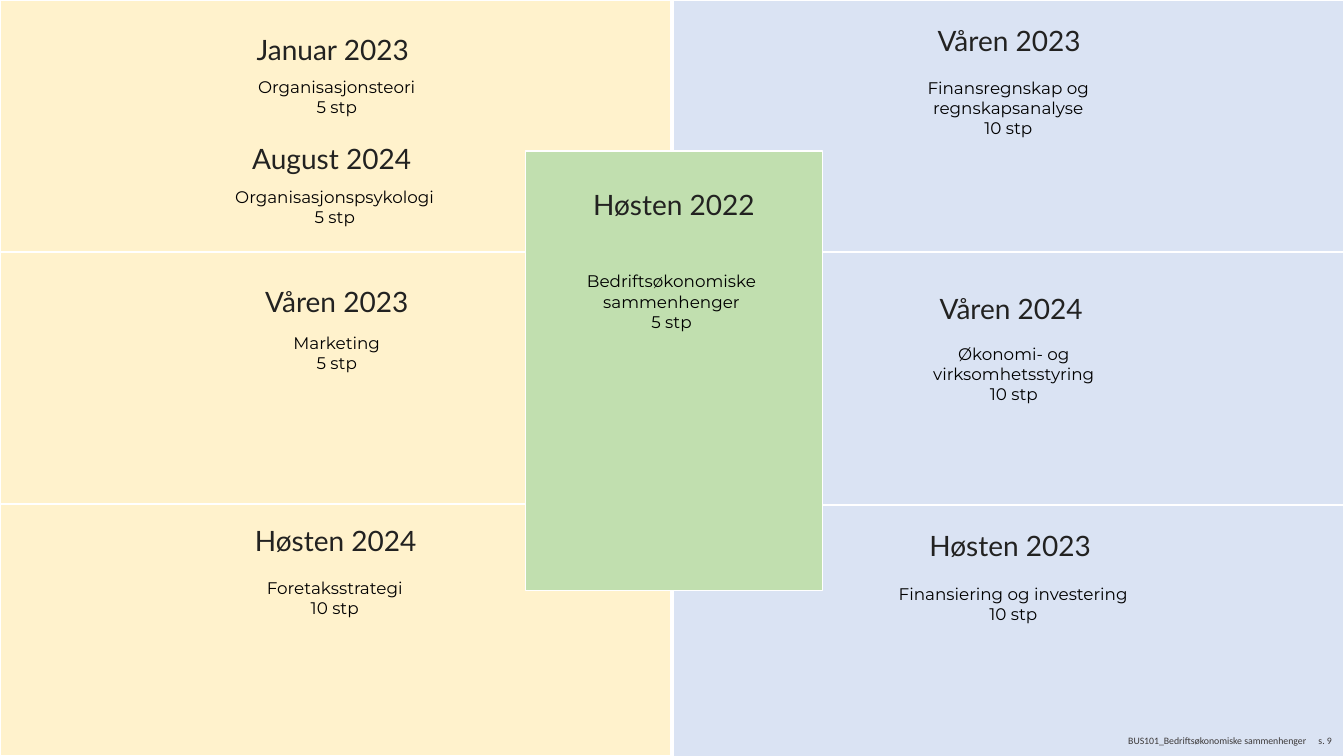
from pptx import Presentation
from pptx.dml.color import RGBColor
from pptx.enum import shapes, text
from pptx.util import Inches, Pt

CREAM = RGBColor(0xFF, 0xF2, 0xCC)
PALE_BLUE = RGBColor(0xDA, 0xE3, 0xF3)
GREEN = RGBColor(0xC1, 0xDF, 0xAF)
WHITE = RGBColor(0xFF, 0xFF, 0xFF)
BLACK = RGBColor(0, 0, 0)
CHARCOAL = RGBColor(0x22, 0x22, 0x21)
GREY = RGBColor(0x3B, 0x38, 0x38)

prs = Presentation()
prs.slide_width = Inches(13.33)
prs.slide_height = Inches(7.5)
slide = prs.slides.add_slide(prs.slide_layouts[6])


def add_panel(left, top, width, height, color):
    panel = slide.shapes.add_shape(
        shapes.MSO_SHAPE.RECTANGLE,
        Inches(left), Inches(top), Inches(width), Inches(height))
    panel.shadow.inherit = False
    panel.fill.solid()
    panel.fill.fore_color.rgb = color
    panel.line.color.rgb = WHITE
    panel.line.width = Pt(1)


def add_text(lines, left, top, width, height, *, size, font, color,
             align=text.PP_ALIGN.CENTER, anchor=text.MSO_ANCHOR.TOP,
             inset_x=0.1, inset_y=0.05):
    box = slide.shapes.add_textbox(
        Inches(left), Inches(top), Inches(width), Inches(height))
    frame = box.text_frame
    frame.word_wrap = True
    frame.vertical_anchor = anchor
    frame.margin_left = frame.margin_right = Inches(inset_x)
    frame.margin_top = frame.margin_bottom = Inches(inset_y)
    frame.text = "\n".join(lines)
    for paragraph in frame.paragraphs:
        paragraph.alignment = align
        paragraph.font.size = Pt(size)
        paragraph.font.name = font
        paragraph.font.color.rgb = color


# Three rows in two columns, with the introductory course on top
for row in range(3):
    add_panel(0, row * 2.5, 6.65, 2.5, CREAM)
    add_panel(6.68, row * 2.505, 6.65, 2.5, PALE_BLUE)
add_panel(5.21, 1.5, 2.95, 4.36, GREEN)

# Semester and its place, then course, credits and their place
courses = [
    ("Høsten 2022", (5.21, 1.81, 2.95),
     "Bedriftsøkonomiske sammenhenger", "5 stp", (5.05, 2.61, 3.22, 0.76)),
    ("Våren 2023", (6.68, 0.18, 6.66),
     "Finansregnskap og regnskapsanalyse", "10 stp", (8.39, 0.69, 3.22, 0.76)),
    ("Våren 2024", (7.45, 2.84, 5.16),
     "Økonomi- og virksomhetsstyring", "10 stp", (8.58, 3.33, 2.95, 0.76)),
    ("Høsten 2023", (6.69, 5.19, 6.66),
     "Finansiering og investering", "10 stp", (8.76, 5.71, 2.58, 0.76)),
    ("Høsten 2024", (0, 5.14, 6.66),
     "Foretaksstrategi", "10 stp", (1.71, 5.65, 3.22, 0.56)),
    ("Våren 2023", (-0.02, 2.77, 6.72),
     "Marketing", "5 stp", (1.73, 3.22, 3.22, 0.56)),
    ("Januar 2023", (-0.06, 0.27, 6.72),
     "Organisasjonsteori", "5 stp", (1.73, 0.68, 3.22, 0.56)),
    ("August 2024", (-0.07, 1.35, 6.72),
     "Organisasjonspsykologi", "5 stp", (1.71, 1.77, 3.22, 0.56)),
]
for semester, semester_place, course, credits, course_place in courses:
    add_text([semester], *semester_place, 0.44,
             size=20, font="Lato", color=CHARCOAL)
    add_text([course, credits], *course_place,
             size=12, font="Montserrat", color=BLACK,
             inset_x=0.12, inset_y=0.08)

footer_format = dict(size=7, font="Calibri", color=GREY, inset_x=0, inset_y=0,
                     anchor=text.MSO_ANCHOR.MIDDLE)
add_text(["BUS101_Bedriftsøkonomiske sammenhenger"], 11.19, 7.22, 2.14, 0.26,
         align=text.PP_ALIGN.LEFT, **footer_format)
add_text(["s. 9"], 12.95, 7.22, 0.26, 0.25,
         align=text.PP_ALIGN.RIGHT, **footer_format)

prs.save("out.pptx")
